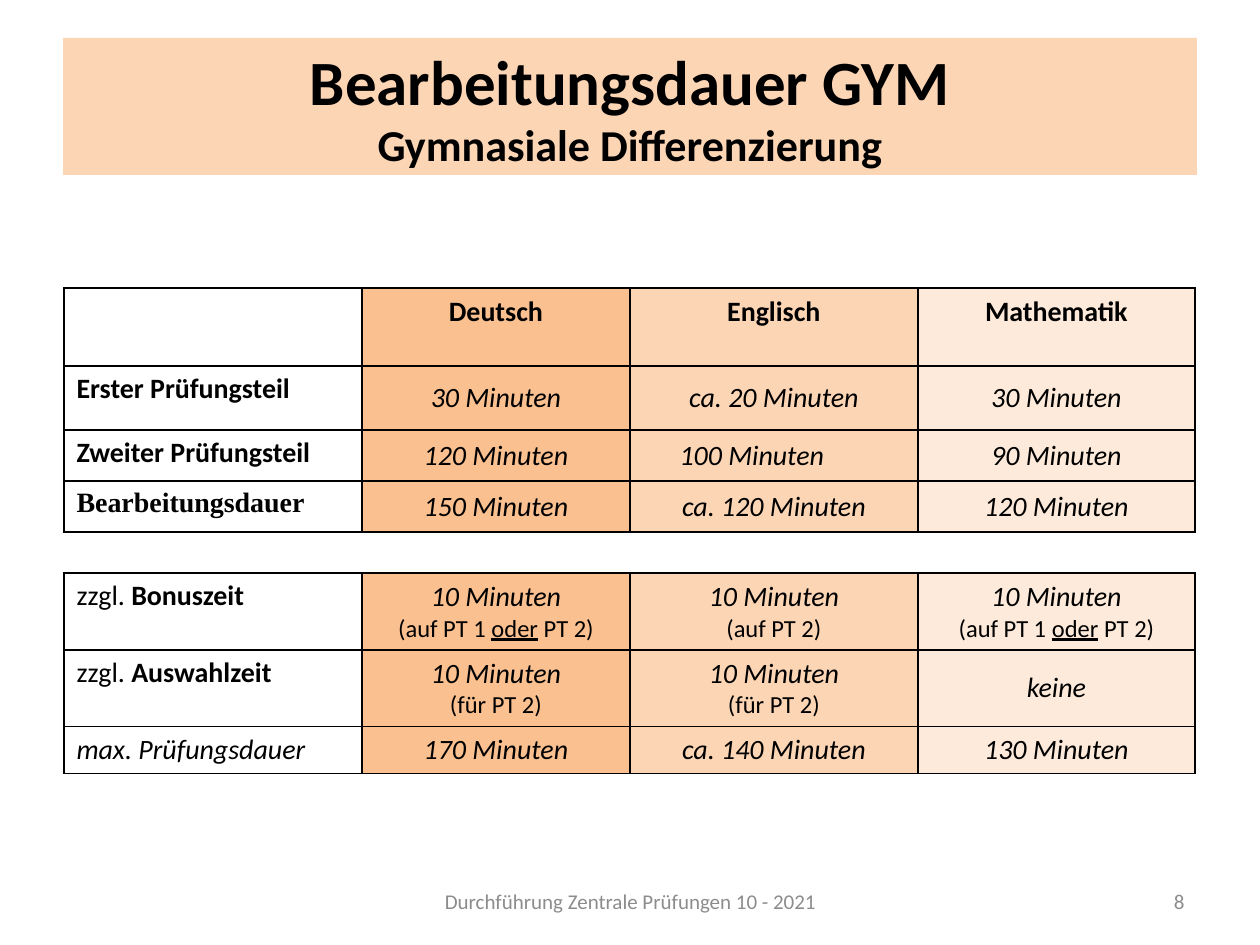
from lxml.etree import SubElement
from pptx import Presentation
from pptx.dml.color import RGBColor
from pptx.enum.text import MSO_ANCHOR, MSO_AUTO_SIZE, PP_ALIGN
from pptx.oxml.ns import qn
from pptx.util import Emu, Pt

SCALE = 914400 / 126
THEME = {
    "font": "Calibri",
    "serif": "Times New Roman",
    "text": "000000",
    "footer": "8C8C8C",
    "banner": "FCD5B5",
    "columns": ["FFFFFF", "FAC090", "FCD5B5", "FDEADA"],
    "title_size": 36,
    "subtitle_size": 25.2,
    "cell_size": 16,
    "note_size": 14,
    "footer_size": 12,
    "border": 1,
}
STYLES = {
    "title": {"size": Pt(THEME["title_size"]), "bold": True},
    "subtitle": {"size": Pt(THEME["subtitle_size"]), "bold": True},
    "plain": {"size": Pt(THEME["cell_size"])},
    "label": {"size": Pt(THEME["cell_size"]), "bold": True},
    "serif": {"size": Pt(THEME["cell_size"]), "bold": True, "name": THEME["serif"]},
    "value": {"size": Pt(THEME["cell_size"]), "italic": True},
    "note": {"size": Pt(THEME["note_size"])},
    "stress": {"size": Pt(THEME["note_size"]), "underline": True},
    "footer": {"size": Pt(THEME["footer_size"])},
}


def px(length):
    return Emu(round(length * SCALE))


def add_run(paragraph, text, style, color=THEME["text"]):
    run = paragraph.add_run()
    run.text = text
    formats = {"name": THEME["font"], "bold": False, **STYLES[style]}
    for attribute, value in formats.items():
        setattr(run.font, attribute, value)
    run.font.color.rgb = RGBColor.from_string(color)


presentation = Presentation()
presentation.slide_width = px(1260)
presentation.slide_height = px(945)
slide = presentation.slides.add_slide(presentation.slide_layouts[5])

title = slide.shapes.title
for attribute, length in {"left": 63, "top": 38, "width": 1134, "height": 137}.items():
    setattr(title, attribute, px(length))
title.fill.solid()
title.fill.fore_color.rgb = RGBColor.from_string(THEME["banner"])
title.text_frame.auto_size = MSO_AUTO_SIZE.NONE
title.text_frame.vertical_anchor = MSO_ANCHOR.MIDDLE
heading = title.text_frame.paragraphs[0]
heading.alignment = PP_ALIGN.CENTER
add_run(heading, "Bearbeitungsdauer GYM", "title")
heading.add_line_break()
add_run(heading, "Gymnasiale Differenzierung", "subtitle")

ten_minutes = [("10 Minuten", "value")]
either_part = [("(auf PT 1 ", "note"), ("oder", "stress"), (" PT 2)", "note")]
bonus_either = [ten_minutes, either_part]
bonus_second = [ten_minutes, [("(auf PT 2)", "note")]]
choice_second = [ten_minutes, [("(für PT 2)", "note")]]

exam_rows = [
    [[], [[("Deutsch", "label")]], [[("Englisch", "label")]], [[("Mathematik", "label")]]],
]
for label, style, values in [
    ("Erster Prüfungsteil", "label", ["30 Minuten", "ca. 20 Minuten", "30 Minuten"]),
    ("Zweiter Prüfungsteil", "label", ["120 Minuten", "100 Minuten", "90 Minuten"]),
    ("Bearbeitungsdauer", "serif", ["150 Minuten", "ca. 120 Minuten", "120 Minuten"]),
]:
    exam_rows.append([[[(label, style)]]] + [[[(value, "value")]] for value in values])

extra_rows = [
    [[[("zzgl. ", "plain"), ("Bonuszeit", "label")]], bonus_either, bonus_second, bonus_either],
    [[[("zzgl.", "plain"), (" Auswahlzeit", "label")]], choice_second, choice_second, [[("keine", "value")]]],
    [[[(text, "value")]] for text in ["max. Prüfungsdauer", "170 Minuten", "ca. 140 Minuten", "130 Minuten"]],
]

column_widths = [298, 268, 288, 277]
tables = []
for top, row_heights, rows in [(288, [78, 64, 51, 51], exam_rows), (573, [77, 76, 47], extra_rows)]:
    frame = slide.shapes.add_table(
        len(rows), len(column_widths), px(64), px(top), px(sum(column_widths)), px(sum(row_heights))
    )
    table = frame.table
    tables.append(table)
    table.first_row = False
    table.horz_banding = False
    for column, width in zip(table.columns, column_widths):
        column.width = px(width)
    for row_index, (row, height) in enumerate(zip(rows, row_heights)):
        table.rows[row_index].height = px(height)
        for column_index, (content, color) in enumerate(zip(row, THEME["columns"])):
            cell = table.cell(row_index, column_index)
            is_heading = column_index == 0 or (rows is exam_rows and row_index == 0)
            cell.vertical_anchor = MSO_ANCHOR.TOP if is_heading else MSO_ANCHOR.MIDDLE
            properties = cell._tc.get_or_add_tcPr()
            for side in ["a:lnL", "a:lnR", "a:lnT", "a:lnB"]:
                line = SubElement(properties, qn(side), w=str(Pt(THEME["border"])))
                line_fill = SubElement(line, qn("a:solidFill"))
                SubElement(line_fill, qn("a:srgbClr"), val=THEME["text"])
            cell.fill.solid()
            cell.fill.fore_color.rgb = RGBColor.from_string(color)
            for index, runs in enumerate(content):
                text_frame = cell.text_frame
                paragraph = text_frame.add_paragraph() if index else text_frame.paragraphs[0]
                paragraph.alignment = PP_ALIGN.CENTER if column_index else PP_ALIGN.LEFT
                for text, style in runs:
                    add_run(paragraph, text, style)

english_second_part = tables[0].cell(2, 2).text_frame.paragraphs[0]
english_second_part.alignment = PP_ALIGN.LEFT
english_second_part._p.get_or_add_pPr().set("marL", str(px(37)))

for left, width, text, alignment in [
    (431, 399, "Durchführung Zentrale Prüfungen 10 - 2021", PP_ALIGN.CENTER),
    (903, 294, "8", PP_ALIGN.RIGHT),
]:
    footer = slide.shapes.add_textbox(px(left), px(876), px(width), px(50))
    footer.text_frame.word_wrap = True
    footer.text_frame.vertical_anchor = MSO_ANCHOR.MIDDLE
    paragraph = footer.text_frame.paragraphs[0]
    paragraph.alignment = alignment
    add_run(paragraph, text, "footer", THEME["footer"])

presentation.save("out.pptx")
